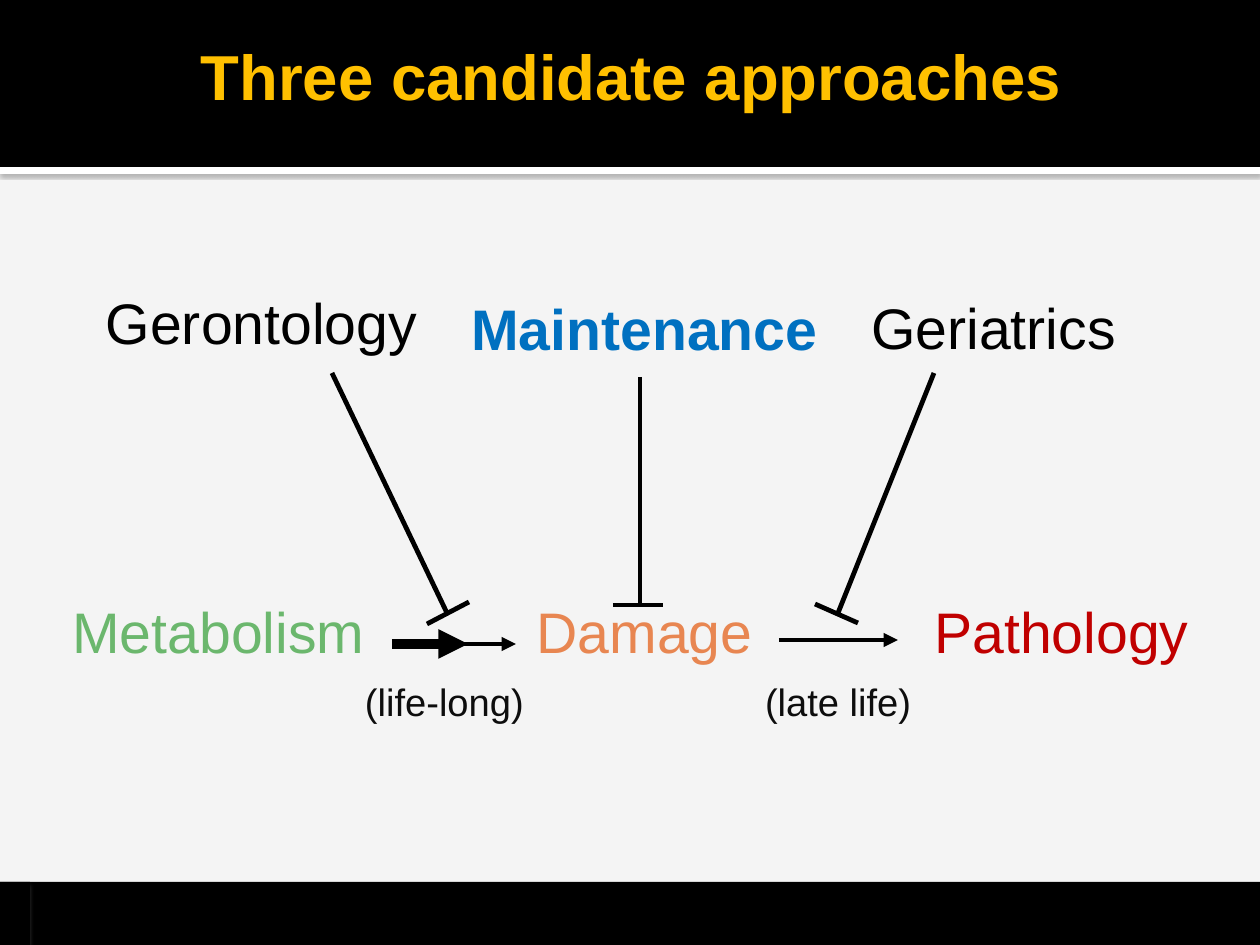
from dataclasses import dataclass

from lxml.etree import SubElement
from pptx import Presentation
from pptx.dml.color import RGBColor
from pptx.enum.shapes import MSO_CONNECTOR, MSO_SHAPE
from pptx.enum.text import MSO_ANCHOR, MSO_AUTO_SIZE, PP_ALIGN
from pptx.oxml.ns import qn
from pptx.slide import Slide
from pptx.util import Emu, Pt

PX = 8000
WIDTH, HEIGHT = 1260, 945


@dataclass(frozen=True)
class Theme:
    font: str = "Arial"
    background: str = "F4F4F4"
    black: str = "000000"
    white: str = "FFFFFF"
    shadow: str = "808080"
    title: str = "FFC000"
    maintenance: str = "0070C0"
    metabolism: str = "6BB76D"
    damage: str = "E88651"
    pathology: str = "C00000"
    caption: str = "0D0D0D"
    title_size: int = 40
    term_size: int = 36
    caption_size: int = 24
    thin: float = 3
    thick: float = 6.25


THEME = Theme()


@dataclass(frozen=True)
class Shadow:
    opacity: int
    blur: float
    distance: float


@dataclass(frozen=True)
class Band:
    x: int
    y: int
    w: int
    h: int
    color: str
    shadow: Shadow | None = None


@dataclass(frozen=True)
class Label:
    text: str
    x: int
    y: int
    w: int
    h: int
    color: str
    size: int = THEME.term_size
    bold: bool = False
    align: PP_ALIGN = PP_ALIGN.CENTER
    anchor: MSO_ANCHOR = MSO_ANCHOR.TOP
    fit: bool = True
    insets: tuple[int, int, int, int] = (11, 6, 11, 6)
    tab: int | None = None


@dataclass(frozen=True)
class Stroke:
    x1: int
    y1: int
    x2: int
    y2: int
    width: float = THEME.thin
    arrow: bool = False


def px(n: int) -> Emu:
    return Emu(n * PX)


def rgb(color: str) -> RGBColor:
    return RGBColor.from_string(color)


def add_band(s: Slide, band: Band) -> None:
    sp = s.shapes.add_shape(MSO_SHAPE.RECTANGLE, px(band.x), px(band.y), px(band.w), px(band.h))
    sp.fill.solid()
    sp.fill.fore_color.rgb = rgb(band.color)
    sp.line.fill.background()
    sp.shadow.inherit = False
    if band.shadow:
        effects = sp._element.spPr.find(qn("a:effectLst"))
        outer = SubElement(effects, qn("a:outerShdw"), blurRad=str(Pt(band.shadow.blur)),
                           dist=str(Pt(band.shadow.distance)), dir=str(90 * 60000),
                           algn="tl", rotWithShape="0")
        color = SubElement(outer, qn("a:srgbClr"), val=THEME.shadow)
        SubElement(color, qn("a:alpha"), val=str(band.shadow.opacity * 1000))


def add_label(s: Slide, label: Label) -> None:
    sp = s.shapes.add_textbox(px(label.x), px(label.y), px(label.w), px(label.h))
    tf = sp.text_frame
    tf.word_wrap = True
    tf.auto_size = MSO_AUTO_SIZE.SHAPE_TO_FIT_TEXT if label.fit else MSO_AUTO_SIZE.NONE
    tf.vertical_anchor = label.anchor
    tf.margin_left, tf.margin_top, tf.margin_right, tf.margin_bottom = map(px, label.insets)
    p = tf.paragraphs[0]
    p.alignment = label.align
    if label.tab:
        tabs = SubElement(p._p.get_or_add_pPr(), qn("a:tabLst"))
        SubElement(tabs, qn("a:tab"), pos=str(px(label.tab)), algn="l")
    r = p.add_run()
    r.text = label.text
    r.font.name = THEME.font
    r.font.size = Pt(label.size)
    r.font.bold = label.bold
    r.font.color.rgb = rgb(label.color)


def add_stroke(s: Slide, stroke: Stroke) -> None:
    line = s.shapes.add_connector(MSO_CONNECTOR.STRAIGHT, px(stroke.x1), px(stroke.y1),
                                  px(stroke.x2), px(stroke.y2))
    line.line.color.rgb = rgb(THEME.black)
    line.line.width = Pt(stroke.width)
    if stroke.arrow:
        SubElement(line.line._get_or_add_ln(), qn("a:tailEnd"), type="triangle")
    SubElement(line._element.spPr, qn("a:effectLst"))


# Header and footer
BANDS = [
    Band(0, 882, WIDTH, 63, THEME.black),
    Band(0, 167, WIDTH, 7, THEME.white, Shadow(60, 2.5, 0.8)),
    Band(0, 0, WIDTH, 167, THEME.black),
    Band(0, 882, 30, 63, THEME.black, Shadow(38, 3.1, 2)),
]

TITLE = Label("Three candidate approaches", 6, -3, 1244, 158, THEME.title, THEME.title_size,
              bold=True, anchor=MSO_ANCHOR.MIDDLE, fit=False, insets=(13, 5, 7, 7))

# Approaches above, stages of ageing below
TERMS = [
    Label("Gerontology", 58, 281, 407, 82, THEME.black),
    Label("Maintenance", 441, 287, 407, 82, THEME.maintenance, bold=True),
    Label("Geriatrics", 815, 286, 357, 82, THEME.black),
    Label("Metabolism", 0, 590, 437, 82, THEME.metabolism),
    Label("Damage", 481, 590, 327, 82, THEME.damage),
    Label("Pathology", 898, 590, 327, 82, THEME.pathology),
]

CAPTION = Label("(life-long)\t(late life)", 354, 672, 714, 58, THEME.caption,
                THEME.caption_size, align=PP_ALIGN.LEFT, tab=400)

# Each approach blocks a step: a stem, then its bar
INHIBITORS = [
    Stroke(332, 373, 447, 613), Stroke(427, 624, 469, 602),
    Stroke(640, 377, 640, 605), Stroke(613, 605, 663, 605),
    Stroke(934, 373, 838, 613), Stroke(815, 604, 858, 623),
]

# Steps from stage to stage
ARROWS = [
    Stroke(392, 644, 468, 644, THEME.thick, arrow=True),
    Stroke(458, 644, 516, 644, arrow=True),
    Stroke(779, 640, 898, 640, arrow=True),
]


def main() -> None:
    prs = Presentation()
    prs.slide_width, prs.slide_height = px(WIDTH), px(HEIGHT)
    s = prs.slides.add_slide(prs.slide_layouts[6])
    s.background.fill.solid()
    s.background.fill.fore_color.rgb = rgb(THEME.background)
    for band in BANDS:
        add_band(s, band)
    for label in [TITLE, *TERMS, CAPTION]:
        add_label(s, label)
    for stroke in INHIBITORS + ARROWS:
        add_stroke(s, stroke)
    prs.save("out.pptx")


if __name__ == "__main__":
    main()
